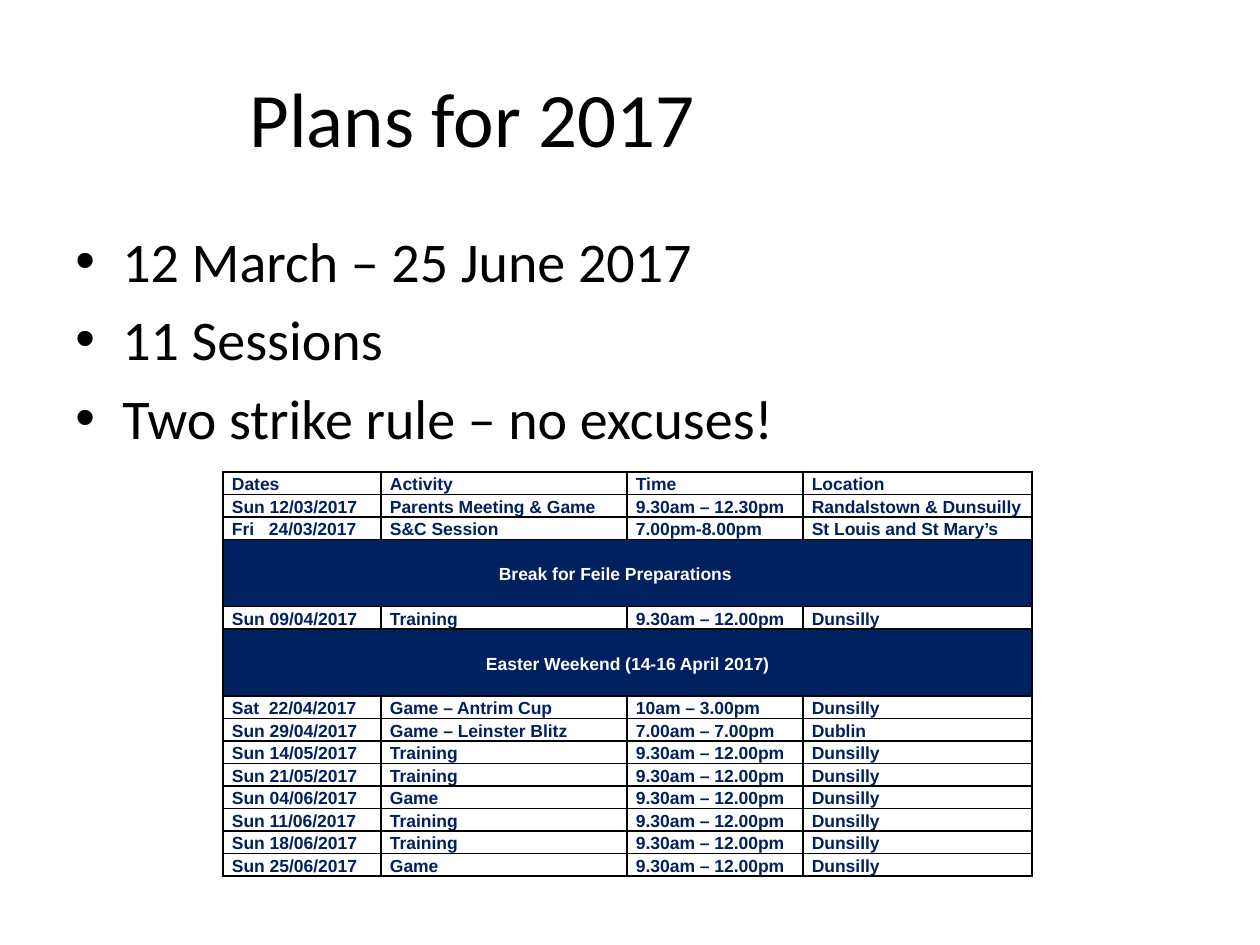
from lxml import etree
from pptx import Presentation
from pptx.dml.color import RGBColor
from pptx.enum.text import MSO_ANCHOR, PP_ALIGN
from pptx.oxml.ns import qn
from pptx.util import Emu, Pt

PX = 914400 // 126
BLACK = RGBColor(0x00, 0x00, 0x00)
WHITE = RGBColor(0xFF, 0xFF, 0xFF)
NAVY = RGBColor(0x00, 0x20, 0x60)
MIDDLE, TOP = MSO_ANCHOR.MIDDLE, MSO_ANCHOR.TOP
LEFT, CENTER = PP_ALIGN.LEFT, PP_ALIGN.CENTER

TITLE = "Plans for 2017"
POINTS = ["12 March – 25 June 2017", "11 Sessions", "Two strike rule – no excuses!"]
MORNING = "9.30am – 12.00pm"
# A row with a single entry is a break that spans the table
SCHEDULE = [
    ("Dates", "Activity", "Time", "Location"),
    ("Sun 12/03/2017", "Parents Meeting & Game", "9.30am – 12.30pm", "Randalstown & Dunsuilly"),
    ("Fri\t24/03/2017", "S&C Session", "7.00pm-8.00pm", "St Louis and St Mary’s"),
    ("Break for Feile Preparations",),
    ("Sun 09/04/2017", "Training", MORNING, "Dunsilly"),
    ("Easter Weekend (14-16 April 2017)",),
    ("Sat\t22/04/2017", "Game – Antrim Cup", "10am – 3.00pm", "Dunsilly"),
    ("Sun 29/04/2017", "Game – Leinster Blitz", "7.00am – 7.00pm", "Dublin"),
    ("Sun 14/05/2017", "Training", MORNING, "Dunsilly"),
    ("Sun 21/05/2017", "Training", MORNING, "Dunsilly"),
    ("Sun 04/06/2017", "Game", MORNING, "Dunsilly"),
    ("Sun 11/06/2017", "Training", MORNING, "Dunsilly"),
    ("Sun 18/06/2017", "Training", MORNING, "Dunsilly"),
    ("Sun 25/06/2017", "Game", MORNING, "Dunsilly"),
]
BREAK_LAYOUT = {
    "Break for Feile Preparations": (LEFT, 267),
    "Easter Weekend (14-16 April 2017)": (CENTER, 0),
}
COLUMNS = [158, 246, 176, 229]
ROW_HEIGHT, BREAK_HEIGHT = 22, 67
ROW_LINE = Pt(12.85)
DATE_TAB = 37


def px(n):
    return Emu(n * PX)


def set_font(paragraph, name, size, color, bold=False):
    font = paragraph.font
    font.name, font.size, font.bold = name, Pt(size), bold
    font.color.rgb = color


def set_indent(paragraph, margin, hanging=0):
    props = paragraph._p.get_or_add_pPr()
    props.set("marL", str(px(margin)))
    props.set("indent", str(px(-hanging)))
    return props


def add_text(slide, box, anchor):
    frame = slide.shapes.add_textbox(*map(px, box)).text_frame
    frame.word_wrap = True
    frame.vertical_anchor = anchor
    return frame


def add_borders(cell):
    props = cell._tc.get_or_add_tcPr()
    for i, side in enumerate(("lnL", "lnR", "lnT", "lnB")):
        line = etree.Element(qn(f"a:{side}"), w=str(Pt(1)))
        fill = etree.SubElement(line, qn("a:solidFill"))
        etree.SubElement(fill, qn("a:srgbClr"), val=str(BLACK))
        props.insert(i, line)


def write_cell(cell, text, color):
    cell.margin_left = cell.margin_right = px(9)
    cell.margin_top = cell.margin_bottom = 0
    paragraph = cell.text_frame.paragraphs[0]
    paragraph.text = text
    paragraph.line_spacing = ROW_LINE
    if "\t" in text:
        tabs = etree.SubElement(paragraph._p.get_or_add_pPr(), qn("a:tabLst"))
        etree.SubElement(tabs, qn("a:tab"), pos=str(px(DATE_TAB)), algn="l")
    set_font(paragraph, "Arial", 10, color, bold=True)
    return paragraph


def add_schedule(slide):
    heights = [BREAK_HEIGHT if len(row) == 1 else ROW_HEIGHT for row in SCHEDULE]
    table = slide.shapes.add_table(
        len(SCHEDULE), len(COLUMNS), px(223), px(472), px(sum(COLUMNS)), px(sum(heights))
    ).table
    table.first_row = table.horz_banding = False
    for column, width in zip(table.columns, COLUMNS):
        column.width = px(width)
    for r, (entries, height) in enumerate(zip(SCHEDULE, heights)):
        table.rows[r].height = px(height)
        is_break = len(entries) == 1
        for c in range(len(COLUMNS)):
            cell = table.cell(r, c)
            if is_break:
                cell.fill.solid()
                cell.fill.fore_color.rgb = NAVY
            else:
                cell.fill.background()
                write_cell(cell, entries[c], NAVY)
            add_borders(cell)
        if is_break:
            banner = table.cell(r, 0)
            banner.merge(table.cell(r, len(COLUMNS) - 1))
            banner.vertical_anchor = MIDDLE
            paragraph = write_cell(banner, entries[0], WHITE)
            paragraph.alignment, margin = BREAK_LAYOUT[entries[0]]
            set_indent(paragraph, margin)


def main():
    prs = Presentation()
    prs.slide_width, prs.slide_height = px(1260), px(945)
    slide = prs.slides.add_slide(prs.slide_layouts[6])

    # Title
    heading = add_text(slide, (63, 38, 1134, 157), MIDDLE).paragraphs[0]
    heading.text = TITLE
    set_indent(heading, 174)
    set_font(heading, "Calibri", 44, BLACK)

    # Key points
    body = add_text(slide, (63, 220, 1134, 624), TOP)
    for i, point in enumerate(POINTS):
        paragraph = body.add_paragraph() if i else body.paragraphs[0]
        paragraph.text = point
        if i:
            paragraph.space_before = Pt(6.4)
        props = set_indent(paragraph, 47, hanging=47)
        etree.SubElement(props, qn("a:buFont"), typeface="Arial")
        etree.SubElement(props, qn("a:buChar"), char="•")
        set_font(paragraph, "Calibri", 32, BLACK)

    # Session schedule
    add_schedule(slide)
    prs.save("out.pptx")


if __name__ == "__main__":
    main()
